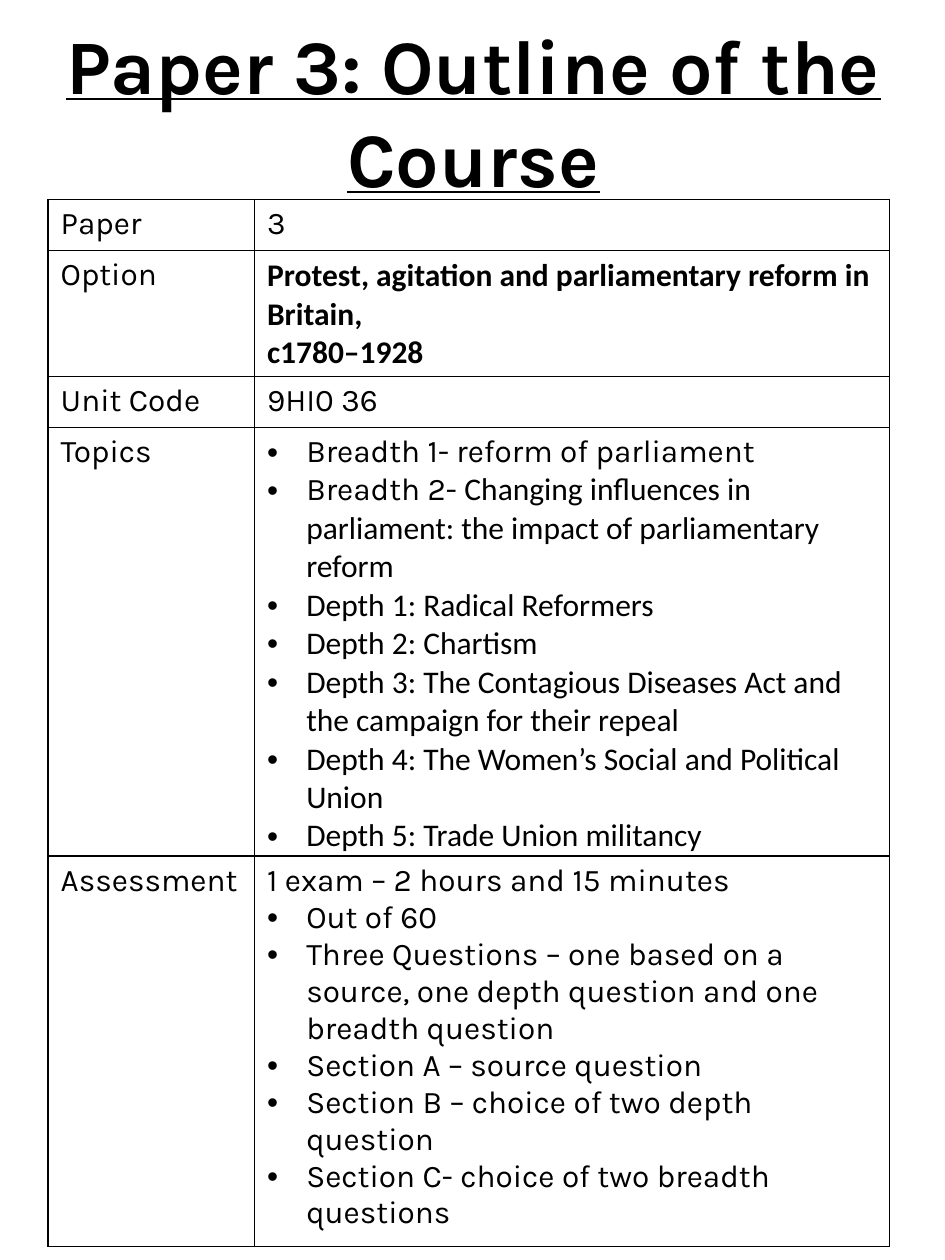
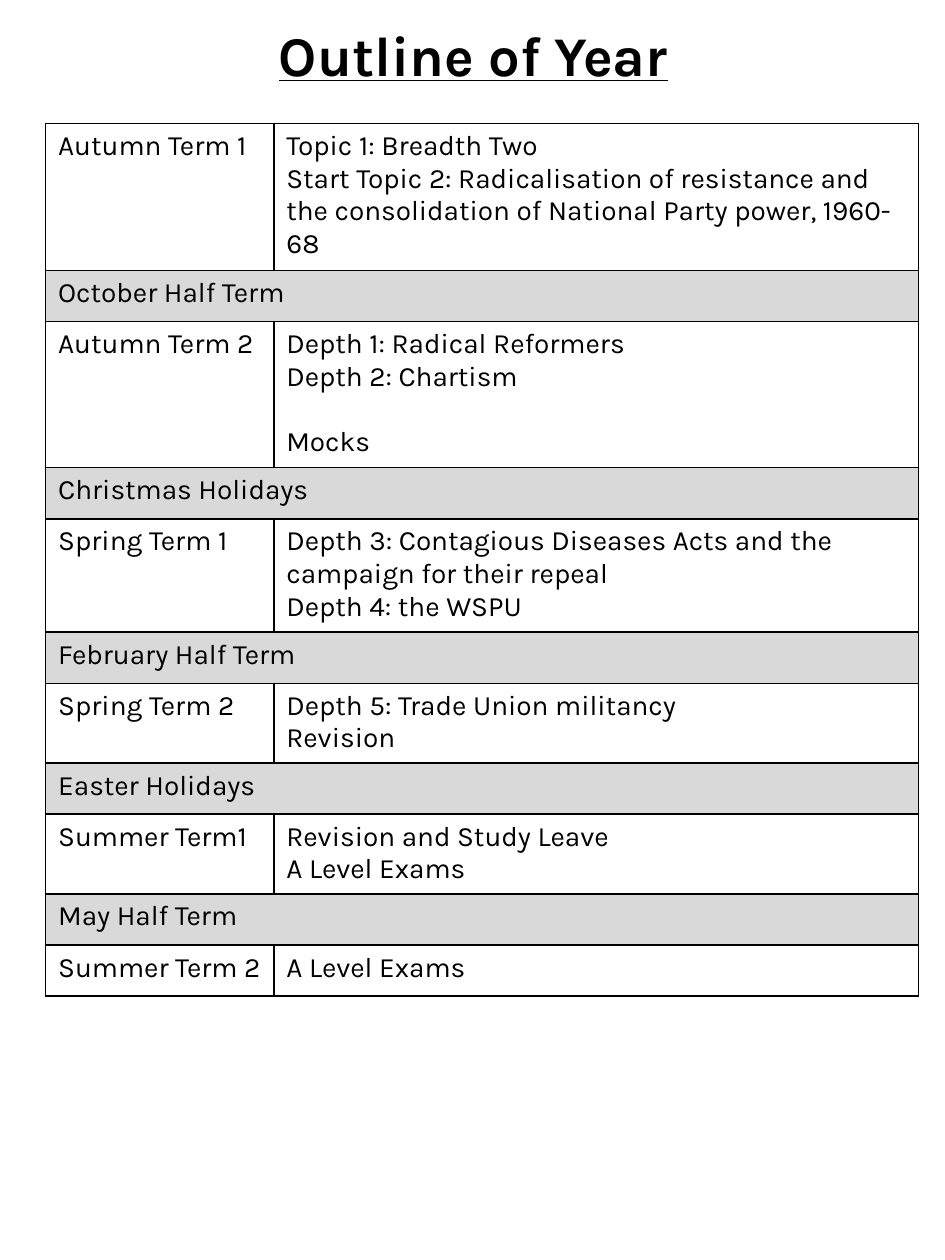
"""Build two course outline pages, each a title above a bordered table."""
from dataclasses import dataclass

from lxml.etree import SubElement
from pptx import Presentation
from pptx.dml.color import RGBColor
from pptx.enum.text import MSO_ANCHOR as Anchor, PP_ALIGN as Align
from pptx.oxml.ns import qn
from pptx.util import Cm, Pt


@dataclass(frozen=True)
class Theme:
    ink: str = "000000"
    paper: str = "FFFFFF"
    holiday: str = "D9D9D9"
    font: str = "Karla"
    plain_font: str = "Calibri"
    outline_title: int = 44
    outline_text: int = 18
    year_title: int = 32
    year_text: int = 16
    border: float = 1
    indent: float = 0.79
    row_height: float = 1.03


THEME = Theme()


@dataclass(frozen=True)
class Run:
    text: str
    font: str = THEME.font
    bold: bool = False


@dataclass(frozen=True)
class Line:
    runs: tuple[Run, ...]
    bullet: bool = False
    before: float = 0


@dataclass(frozen=True)
class Row:
    label: str
    lines: tuple[Line, ...] = ()


@dataclass(frozen=True)
class Page:
    title: str
    title_size: int
    title_box: tuple[float, float, float, float]
    table_origin: tuple[float, float]
    columns: tuple[float, float]
    text_size: int
    rows: tuple[Row, ...]


def lines(*texts: str, **run_format) -> tuple[Line, ...]:
    """Make one unbulleted line for each text."""
    return tuple(Line((Run(text, **run_format),)) for text in texts)


def bullets(*texts: str, **run_format) -> tuple[Line, ...]:
    """Make one bulleted line for each text."""
    return tuple(Line((Run(text, **run_format),), bullet=True) for text in texts)


OUTLINE = Page(
    "Paper 3: Outline of the Course", THEME.outline_title,
    (0.97, 0.1, 17.15, 4.24), (0.97, 4.02), (4.16, 12.8), THEME.outline_text,
    (
        Row("Paper", lines("3")),
        Row("Option", lines(
            "Protest, agitation and parliamentary reform in Britain,",
            "c1780–1928", font=THEME.plain_font, bold=True)),
        Row("Unit Code", lines("9HI0 36")),
        Row("Topics", (
            *bullets("Breadth 1- reform of parliament"),
            Line((Run("Breadth 2- "),
                  Run("Changing influences in parliament: the impact of "
                      "parliamentary reform", THEME.plain_font)), bullet=True),
            *bullets(
                "Depth 1: Radical Reformers",
                "Depth 2: Chartism",
                "Depth 3: The Contagious Diseases Act and the campaign for their repeal",
                "Depth 4: The Women’s Social and Political Union",
                "Depth 5: Trade Union militancy", font=THEME.plain_font),
        )),
        Row("Assessment", (
            *lines("1 exam – 2 hours and 15 minutes"),
            *bullets(
                "Out of 60",
                "Three Questions – one based on a source, one depth question "
                "and one breadth question",
                "Section A – source question",
                "Section B – choice of two depth question",
                "Section C- choice of two breadth questions"),
        )),
    ),
)

YEAR = Page(
    "Outline of Year", THEME.year_title,
    (0.97, -0.5, 17.15, 3.2), (0.92, 2.49), (4.6, 13), THEME.year_text,
    (
        Row("Autumn Term 1", lines(
            "Topic 1: Breadth Two",
            "Start Topic 2: Radicalisation of resistance and the consolidation "
            "of National Party power, 1960-68")),
        Row("October Half Term"),
        Row("Autumn Term 2", (
            *lines("Depth 1: Radical Reformers", "Depth 2: Chartism"),
            Line((Run("Mocks"),), before=18.7))),
        Row("Christmas Holidays"),
        Row("Spring Term 1", lines(
            "Depth 3: Contagious Diseases Acts and the campaign for their repeal",
            "Depth 4: the WSPU")),
        Row("February Half Term"),
        Row("Spring Term 2", lines("Depth 5: Trade Union militancy", "Revision")),
        Row("Easter Holidays"),
        Row("Summer Term1", lines("Revision and Study Leave", "A Level Exams")),
        Row("May Half Term"),
        Row("Summer Term 2", lines("A Level Exams")),
    ),
)


def add_bullet(paragraph) -> None:
    """Give a paragraph a hanging round bullet."""
    properties = paragraph._p.get_or_add_pPr()
    properties.set("marL", str(Cm(THEME.indent)))
    properties.set("indent", str(-Cm(THEME.indent)))
    SubElement(properties, qn("a:buFont"), typeface="Arial")
    SubElement(properties, qn("a:buChar"), char="•")


def add_run(paragraph, text: str, *, size: int, font: str = THEME.font,
            bold: bool = False, underline: bool = False) -> None:
    """Append formatted text to a paragraph."""
    run = paragraph.add_run()
    run.text = text
    run.font.size = Pt(size)
    run.font.name = font
    run.font.bold = bold
    run.font.underline = underline
    run.font.color.rgb = RGBColor.from_string(THEME.ink)


def write_lines(frame, content: tuple[Line, ...], size: int) -> None:
    """Write each line as one paragraph of a text frame."""
    for index, line in enumerate(content):
        paragraph = frame.add_paragraph() if index else frame.paragraphs[0]
        if line.bullet:
            add_bullet(paragraph)
        if line.before:
            paragraph.space_before = Pt(line.before)
        for run in line.runs:
            add_run(paragraph, run.text, size=size, font=run.font, bold=run.bold)


def style_cell(cell, fill: str) -> None:
    """Draw the four borders of a cell, then fill it."""
    properties = cell._tc.get_or_add_tcPr()
    for side in ("lnL", "lnR", "lnT", "lnB"):
        border = SubElement(properties, qn(f"a:{side}"), w=str(Pt(THEME.border)))
        solid = SubElement(border, qn("a:solidFill"))
        SubElement(solid, qn("a:srgbClr"), val=THEME.ink)
    cell.fill.solid()
    cell.fill.fore_color.rgb = RGBColor.from_string(fill)


def add_title(slide, page: Page) -> None:
    """Add the centred, underlined page title."""
    frame = slide.shapes.add_textbox(*map(Cm, page.title_box)).text_frame
    frame.word_wrap = True
    frame.vertical_anchor = Anchor.MIDDLE
    paragraph = frame.paragraphs[0]
    paragraph.alignment = Align.CENTER
    add_run(paragraph, page.title, size=page.title_size, bold=True, underline=True)


def add_rows(slide, page: Page) -> None:
    """Add the table, merging the rows that hold only a label."""
    table = slide.shapes.add_table(
        len(page.rows), len(page.columns), *map(Cm, page.table_origin),
        Cm(sum(page.columns)), Cm(THEME.row_height * len(page.rows))).table
    table.first_row = table.horz_banding = False
    for column, width in zip(table.columns, page.columns):
        column.width = Cm(width)
    for index, row in enumerate(page.rows):
        table.rows[index].height = Cm(THEME.row_height)
        label, detail = table.cell(index, 0), table.cell(index, 1)
        for cell in (label, detail):
            style_cell(cell, THEME.paper if row.lines else THEME.holiday)
        write_lines(label.text_frame, lines(row.label), page.text_size)
        if row.lines:
            write_lines(detail.text_frame, row.lines, page.text_size)
        else:
            label.merge(detail)


def main() -> None:
    """Build and save the presentation."""
    presentation = Presentation()
    presentation.slide_width, presentation.slide_height = Cm(19.05), Cm(25.4)
    for page in (OUTLINE, YEAR):
        slide = presentation.slides.add_slide(presentation.slide_layouts[6])
        add_title(slide, page)
        add_rows(slide, page)
    presentation.save("out.pptx")


if __name__ == "__main__":
    main()
